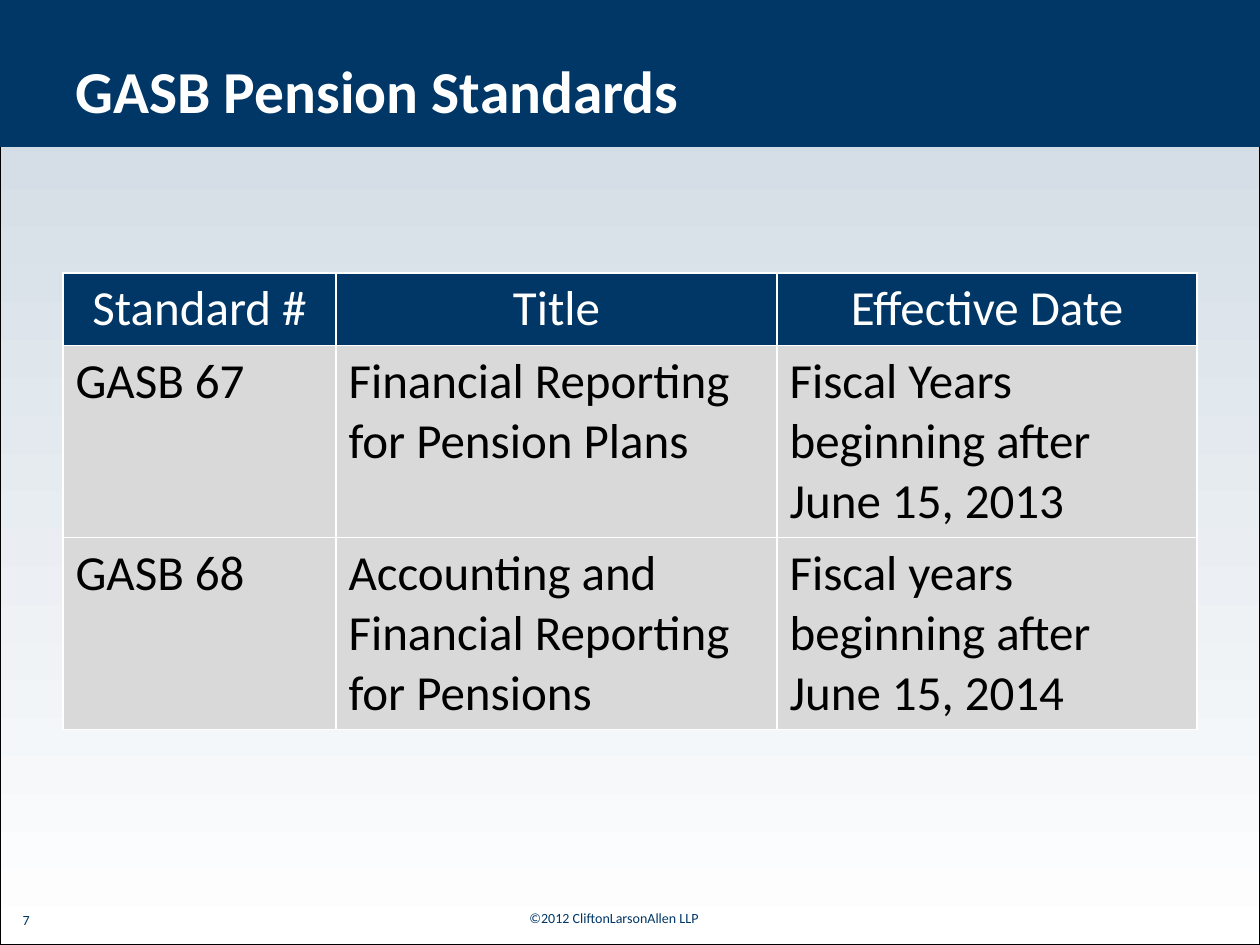
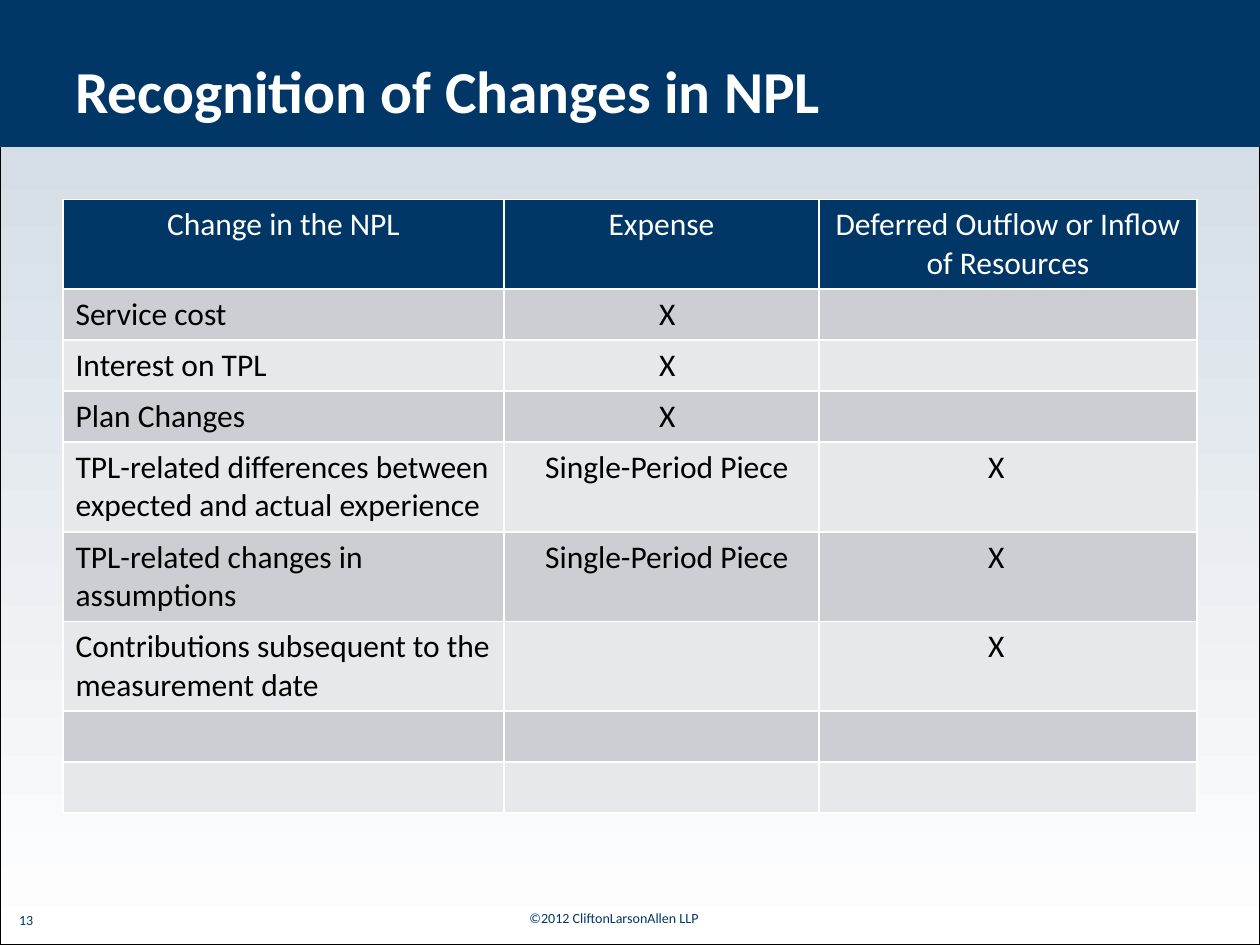
from pptx import Presentation
from pptx.dml.color import RGBColor
from pptx.enum import shapes, text
from pptx.util import Pt

# Shared look
NAVY = RGBColor(0x00, 0x37, 0x67)
SKY = RGBColor(0xCC, 0xD7, 0xE1)
WHITE = RGBColor(0xFF, 0xFF, 0xFF)
BLACK = RGBColor(0x00, 0x00, 0x00)
GREY = RGBColor(0xD9, 0xD9, 0xD9)
BAND_DARK = RGBColor(0xCC, 0xCE, 0xD3)
BAND_LIGHT = RGBColor(0xE7, 0xE8, 0xEB)
FONT = "Calibri"
WIDTH, HEIGHT = 720, 540
TABLE_LEFT = 36
CELL_MARGIN = 7.2
COPYRIGHT = "©2012 CliftonLarsonAllen LLP"

# Slide content
STANDARDS = [
    ["Standard #", "Title", "Effective Date"],
    ["GASB 67", "Financial Reporting for Pension Plans",
     "Fiscal Years beginning after June 15, 2013"],
    ["GASB 68", "Accounting and Financial Reporting for Pensions",
     "Fiscal years beginning after June 15, 2014"],
]
PARTIAL = "Single-Period Piece"
NPL_CHANGES = [
    ["Change in the NPL", "Expense", "Deferred Outflow or Inflow of Resources"],
    ["Service cost", "X", ""],
    ["Interest on TPL", "X", ""],
    ["Plan Changes", "X", ""],
    ["TPL-related differences between expected and actual experience", PARTIAL, "X"],
    ["TPL-related changes in assumptions", PARTIAL, "X"],
    ["Contributions subsequent to the measurement date", "", "X"],
    ["", "", ""],
    ["", "", ""],
]
# Indents that line up the marks, by column and wording
MARK_INDENTS = {(1, "X"): 81.4, (1, PARTIAL): 16.3, (2, "X"): 89.5}


def style_text(paragraph, size, color, bold=False, centered=False):
    paragraph.alignment = text.PP_ALIGN.CENTER if centered else text.PP_ALIGN.LEFT
    for run in paragraph.runs:
        run.font.name = FONT
        run.font.size = Pt(size)
        run.font.bold = bold
        run.font.color.rgb = color


def add_text(slide, words, left, top, width, height, size, color, **style):
    box = slide.shapes.add_textbox(Pt(left), Pt(top), Pt(width), Pt(height))
    frame = box.text_frame
    frame.word_wrap = True
    frame.vertical_anchor = text.MSO_ANCHOR.MIDDLE
    frame.text = words
    style_text(frame.paragraphs[0], size, color, **style)


def add_rectangle(slide, height, fill=None, line=None):
    """Add a full-width rectangle from the top of the slide."""
    shape = slide.shapes.add_shape(
        shapes.MSO_SHAPE.RECTANGLE, 0, 0, Pt(WIDTH), Pt(height))
    shape.shadow.inherit = False
    if fill is None:
        shape.fill.background()
    else:
        shape.fill.solid()
        shape.fill.fore_color.rgb = fill
    if line is None:
        shape.line.fill.background()
    else:
        shape.line.color.rgb = line
        shape.line.width = Pt(0.75)


def add_slide(presentation, title, number):
    """Add a slide with the shared background, frame, footer and title band."""
    slide = presentation.slides.add_slide(presentation.slide_layouts[6])
    fill = slide.background.fill
    fill.gradient()
    fill.gradient_angle = 270
    for stop, color, position in zip(fill.gradient_stops, (SKY, WHITE), (0, 1)):
        stop.color.rgb = color
        stop.position = position

    add_rectangle(slide, HEIGHT, line=BLACK)
    add_text(slide, COPYRIGHT, 294, 516.25, 114, 17, 8, NAVY, centered=True)
    add_text(slide, str(number), 0, 517, 30, 17, 8, NAVY, centered=True)
    add_rectangle(slide, 84, fill=NAVY)
    add_text(slide, title, 36, 24, 648, 54, 34, WHITE, bold=True)
    return slide


def add_table(slide, rows, top, column_widths, row_heights, size, bands, indents=None):
    """Add a table with a navy header and body rows that cycle through bands."""
    table = slide.shapes.add_table(
        len(rows), len(column_widths), Pt(TABLE_LEFT), Pt(top),
        Pt(sum(column_widths)), Pt(sum(row_heights))).table
    table.horz_banding = False
    for column, width in zip(table.columns, column_widths):
        column.width = Pt(width)
    for row_index, (words, height) in enumerate(zip(rows, row_heights)):
        table.rows[row_index].height = Pt(height)
        header = row_index == 0
        for column_index, word in enumerate(words):
            cell = table.cell(row_index, column_index)
            cell.fill.solid()
            cell.fill.fore_color.rgb = (
                NAVY if header else bands[(row_index - 1) % len(bands)])
            indent = (indents or {}).get((column_index, word), 0)
            cell.margin_left = Pt(CELL_MARGIN + indent)
            cell.text_frame.text = word
            style_text(cell.text_frame.paragraphs[0], size,
                       WHITE if header else BLACK, centered=header)


def main():
    presentation = Presentation()
    presentation.slide_width, presentation.slide_height = Pt(WIDTH), Pt(HEIGHT)

    # Pension standards
    slide = add_slide(presentation, "GASB Pension Standards", 7)
    add_table(slide, STANDARDS, 156, [156, 252, 240], [41.5, 109.75, 109.75],
              28, [GREY])

    # Recognition of changes
    slide = add_slide(presentation, "Recognition of Changes in NPL", 13)
    one_line, two_lines = 29.15, 51.25
    heights = [two_lines] + [one_line] * 3 + [two_lines] * 3 + [one_line] * 2
    add_table(slide, NPL_CHANGES, 114, [252, 180, 216], heights,
              18, [BAND_DARK, BAND_LIGHT], MARK_INDENTS)

    presentation.save("out.pptx")


if __name__ == "__main__":
    main()
